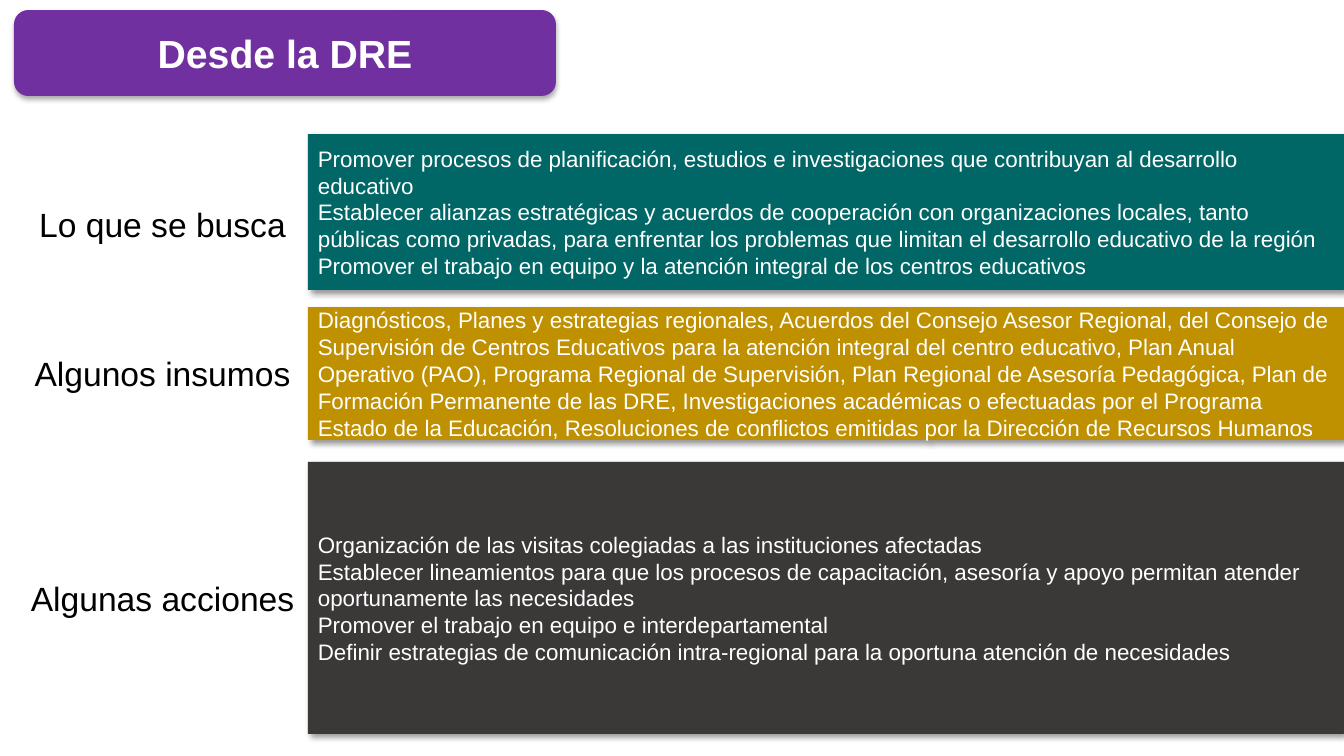
from lxml import etree
from pptx import Presentation
from pptx import util as u
from pptx.dml.color import RGBColor
from pptx.enum import shapes, text
from pptx.oxml import ns

SCALE = 914400 / 100.8
SIZE = (1344, 756)
COLORS = {"title": "7030A0", "goal": "006666", "input": "BF9000",
          "action": "3B3838", "light": "FFFFFF", "dark": "000000"}
SHADE = {"title": (32, 3.5, 2.2, 90), "band": (40, 4, 3, 45)}
TITLE = ("Desde la DRE", (14, 10, 542, 86))
BAND = (308, 1036)
LABEL = (17, 291, 50)
ROWS = [
    ("Lo que se busca", 224, "goal", 134, 156, [
        "Promover procesos de planificación, estudios e investigaciones que contribuyan al desarrollo educativo",
        "Establecer alianzas estratégicas y acuerdos de cooperación con organizaciones locales, tanto públicas como privadas, para enfrentar los problemas que limitan el desarrollo educativo de la región",
        "Promover el trabajo en equipo y la atención integral de los centros educativos"]),
    ("Algunos insumos", 373, "input", 307, 133, [
        "Diagnósticos, Planes y estrategias regionales, Acuerdos del Consejo Asesor Regional, del Consejo de Supervisión de Centros Educativos para la atención integral del centro educativo, Plan Anual Operativo (PAO), Programa Regional de Supervisión, Plan Regional de Asesoría Pedagógica, Plan de Formación Permanente de las DRE, Investigaciones académicas o efectuadas por el Programa Estado de la Educación, Resoluciones de conflictos emitidas por la Dirección de Recursos Humanos"]),
    ("Algunas acciones", 598, "action", 462, 272, [
        "Organización de las visitas colegiadas a las instituciones afectadas",
        "Establecer lineamientos para que los procesos de capacitación, asesoría y apoyo permitan atender oportunamente las necesidades",
        "Promover el trabajo en equipo e interdepartamental",
        "Definir estrategias de comunicación intra-regional para la oportuna atención de necesidades"]),
]
FORMATS = {
    "title": ("light", text.PP_ALIGN.CENTER, {"size": u.Pt(28), "bold": True}),
    "label": ("dark", text.PP_ALIGN.CENTER, {"size": u.Pt(24)}),
    "band": ("light", text.PP_ALIGN.LEFT, {"size": u.Pt(16)}),
}


def px(n):
    return round(n * SCALE)


def write(shape, lines, style):
    color, align, font = FORMATS[style]
    frame = shape.text_frame
    frame.word_wrap = True
    frame.vertical_anchor = text.MSO_ANCHOR.MIDDLE
    frame.text = "\n".join(lines)
    for para in frame.paragraphs:
        para.alignment = align
        for key, value in {"name": "Arial", **font}.items():
            setattr(para.font, key, value)
        para.font.color.rgb = RGBColor.from_string(COLORS[color])


def shade(shape, style):
    alpha, blur, dist, angle = SHADE[style]
    shape.shadow.inherit = False
    effects = shape.element.spPr.find(ns.qn("a:effectLst"))
    outer = etree.SubElement(effects, ns.qn("a:outerShdw"), {
        "blurRad": str(u.Pt(blur)), "dist": str(u.Pt(dist)),
        "dir": str(angle * 60000), "algn": "ctr", "rotWithShape": "0"})
    tone = etree.SubElement(outer, ns.qn("a:srgbClr"), val=COLORS["dark"])
    etree.SubElement(tone, ns.qn("a:alpha"), val=str(alpha * 1000))


def block(slide, kind, box, fill, lines, style):
    shape = slide.shapes.add_shape(kind, *map(px, box))
    shape.fill.solid()
    shape.fill.fore_color.rgb = RGBColor.from_string(COLORS[fill])
    shape.line.fill.background()
    shade(shape, style)
    write(shape, lines, style)


def main():
    deck = Presentation()
    deck.slide_width, deck.slide_height = map(px, SIZE)
    slide = deck.slides.add_slide(deck.slide_layouts[6])
    name, box = TITLE
    block(slide, shapes.MSO_SHAPE.ROUNDED_RECTANGLE, box, "title", [name], "title")
    left, width, height = LABEL
    for label, mid, fill, top, tall, lines in ROWS:
        area = (left, mid - height / 2, width, height)
        write(slide.shapes.add_textbox(*map(px, area)), [label], "label")
        block(slide, shapes.MSO_SHAPE.RECTANGLE,
              (BAND[0], top, BAND[1], tall), fill, lines, "band")
    deck.save("out.pptx")


if __name__ == "__main__":
    main()
